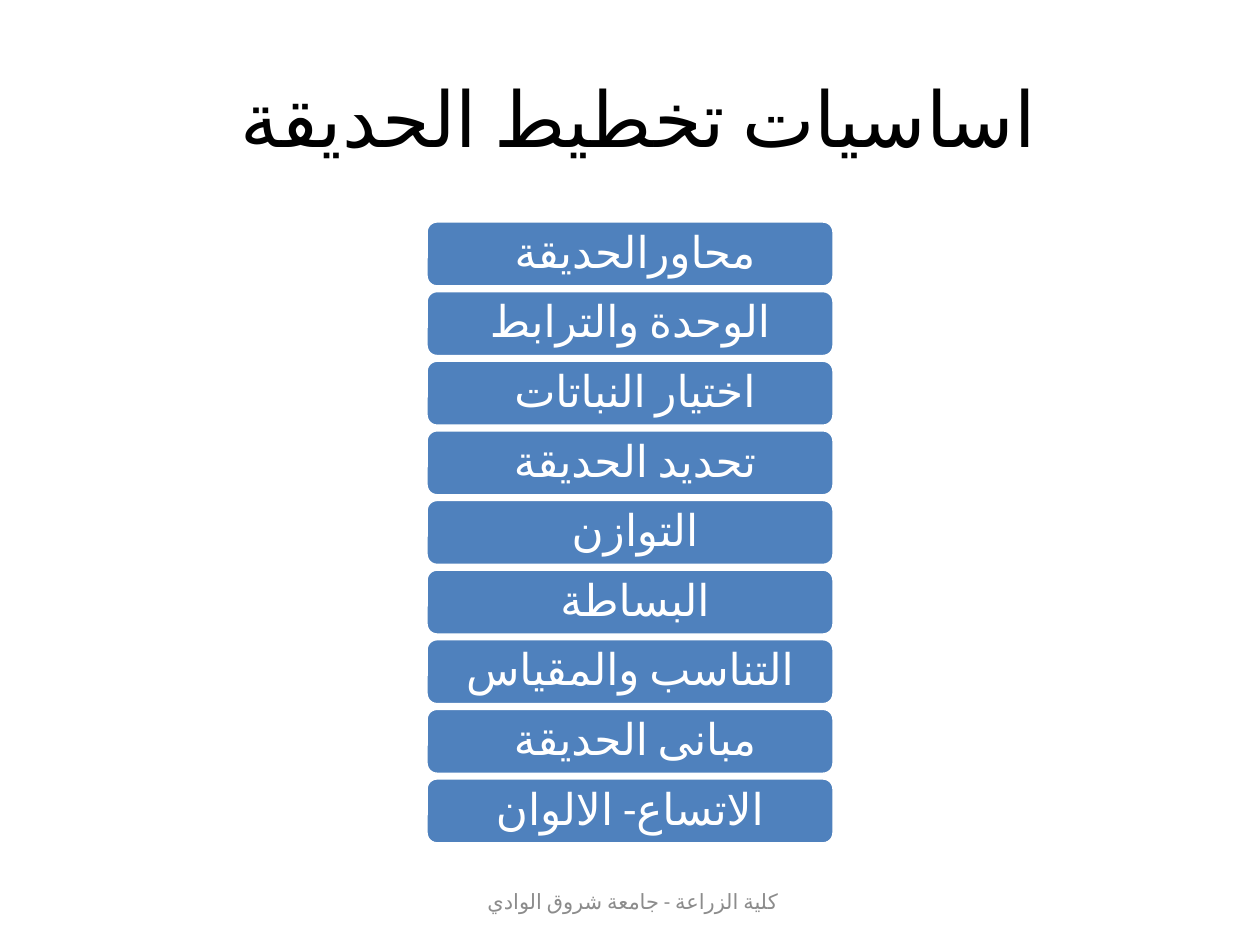
from dataclasses import dataclass

from lxml import etree
from pptx import Presentation, util as u
from pptx.dml.color import RGBColor
from pptx.enum import shapes, text
from pptx.oxml.ns import qn

PX = 914400 / 126  # EMU in one px


@dataclass(frozen=True)
class Theme:
    font: str = "Calibri"
    ink: str = "000000"
    muted: str = "8C8C8C"
    bar: str = "4F81BD"
    paper: str = "FFFFFF"
    title_size: int = 44
    bar_size: int = 25
    footer_size: int = 12


THEME = Theme()

TITLE = "اساسيات تخطيط الحديقة "
PRINCIPLES = [
    "محاورالحديقة ",
    "الوحدة والترابط",
    "اختيار النباتات ",
    "تحديد الحديقة ",
    "التوازن ",
    "البساطة ",
    "التناسب والمقياس",
    "مبانى الحديقة ",
    "الاتساع- الالوان",
]
FOOTER = "كلية الزراعة - جامعة شروق الوادي "

# Stack of bars, in px
BAR_LEFT, BAR_WIDTH, BAR_HEIGHT = 426, 408, 66
FIRST_TOP, LAST_TOP = 221, 778


def px(*lengths):
    return [u.Emu(round(length * PX)) for length in lengths]


def write_arabic(frame, words, size, color):
    """Fill a frame with one centred right-to-left line."""
    frame.word_wrap = True
    frame.vertical_anchor = text.MSO_ANCHOR.MIDDLE
    line = frame.paragraphs[0]
    line.alignment = text.PP_ALIGN.CENTER
    line._p.get_or_add_pPr().set("rtl", "1")
    run = line.add_run()
    run.text = words
    run.font.name = THEME.font
    run.font.size = u.Pt(size)
    run.font.color.rgb = RGBColor.from_string(color)
    # Arabic script takes its typeface from the complex-script slot
    properties = run._r.get_or_add_rPr()
    properties.set("lang", "ar-EG")
    etree.SubElement(properties, qn("a:cs")).set("typeface", THEME.font)
    return line


def add_caption(slide, box, words, size, color):
    caption = slide.shapes.add_textbox(*px(*box))
    write_arabic(caption.text_frame, words, size, color)


def add_bar(slide, top, principle):
    bar = slide.shapes.add_shape(
        shapes.MSO_SHAPE.ROUNDED_RECTANGLE,
        *px(BAR_LEFT, top, BAR_WIDTH, BAR_HEIGHT))
    bar.shadow.inherit = False
    bar.fill.solid()
    bar.fill.fore_color.rgb = RGBColor.from_string(THEME.bar)
    bar.line.color.rgb = RGBColor.from_string(THEME.paper)
    bar.line.width = u.Pt(2)
    line = write_arabic(bar.text_frame, principle, THEME.bar_size, THEME.paper)
    line.line_spacing = 0.9


def main():
    deck = Presentation()
    deck.slide_width, deck.slide_height = px(1260, 945)
    slide = deck.slides.add_slide(deck.slide_layouts[6])

    # Title
    add_caption(slide, (63, 38, 1134, 157), TITLE, THEME.title_size, THEME.ink)

    # Principles, evenly spaced from first to last
    pitch = (LAST_TOP - FIRST_TOP) / (len(PRINCIPLES) - 1)
    for row, principle in enumerate(PRINCIPLES):
        add_bar(slide, FIRST_TOP + row * pitch, principle)

    # Footer
    add_caption(slide, (431, 876, 399, 50), FOOTER,
                THEME.footer_size, THEME.muted)

    deck.save("out.pptx")


if __name__ == "__main__":
    main()
